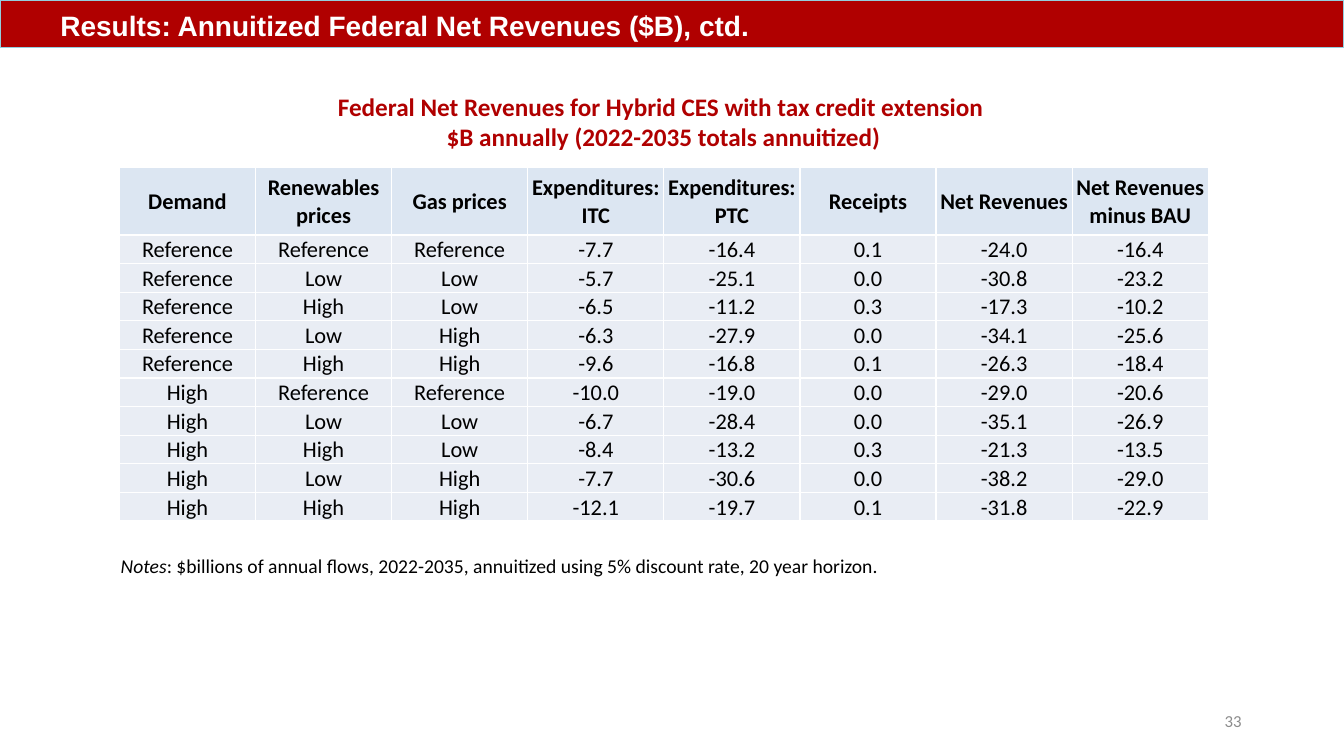
from dataclasses import dataclass

import pptx
import pptx.dml.color
import pptx.enum.text
import pptx.oxml.ns
import pptx.util
from lxml import etree
from pptx.util import Cm

ALIGN = pptx.enum.text.PP_ALIGN
ANCHOR = pptx.enum.text.MSO_ANCHOR

RED = "B00000"
WHITE = "FFFFFF"
BLACK = "000000"
GREY = "8C8C8C"
BAR_EDGE = "93CDDD"
HEADER_FILL = "DCE6F2"
BODY_FILL = "E9EDF4"

SLIDE_WIDTH = Cm(33.87)
SLIDE_HEIGHT = Cm(19.05)
TABLE_LEFT = Cm(3.01)
COLUMN_WIDTH = Cm(3.43)
HEADER_HEIGHT = Cm(1.7)
BODY_ROW_HEIGHT = Cm(0.71)

HEADERS = (
    "Demand", "Renewables prices", "Gas prices", "Expenditures: ITC",
    "Expenditures: PTC", "Receipts", "Net Revenues", "Net Revenues minus BAU",
)
SCENARIOS = (
    ("Reference", "Reference", "Reference", "-7.7", "-16.4", "0.1", "-24.0", "-16.4"),
    ("Reference", "Low", "Low", "-5.7", "-25.1", "0.0", "-30.8", "-23.2"),
    ("Reference", "High", "Low", "-6.5", "-11.2", "0.3", "-17.3", "-10.2"),
    ("Reference", "Low", "High", "-6.3", "-27.9", "0.0", "-34.1", "-25.6"),
    ("Reference", "High", "High", "-9.6", "-16.8", "0.1", "-26.3", "-18.4"),
    ("High", "Reference", "Reference", "-10.0", "-19.0", "0.0", "-29.0", "-20.6"),
    ("High", "Low", "Low", "-6.7", "-28.4", "0.0", "-35.1", "-26.9"),
    ("High", "High", "Low", "-8.4", "-13.2", "0.3", "-21.3", "-13.5"),
    ("High", "Low", "High", "-7.7", "-30.6", "0.0", "-38.2", "-29.0"),
    ("High", "High", "High", "-12.1", "-19.7", "0.1", "-31.8", "-22.9"),
)


@dataclass(frozen=True)
class TextStyle:
    size: int
    color: str = BLACK
    font: str = "Calibri"
    bold: bool = False
    align: ALIGN = ALIGN.CENTER


@dataclass(frozen=True)
class TextBox:
    left: float
    top: float
    width: float
    height: float
    text: str
    style: TextStyle
    anchor: ANCHOR


TITLE_STYLE = TextStyle(20, WHITE, "Arial", True, ALIGN.LEFT)
HEADER_STYLE = TextStyle(16, bold=True)
BODY_STYLE = TextStyle(16)
NOTES_STYLE = TextStyle(14, align=ALIGN.LEFT)

TEXT_BOXES = (
    TextBox(7.34, 2.18, 18.77, 1.8,
            "Federal Net Revenues for Hybrid CES with tax credit extension \n"
            "$B annually (2022-2035 totals annuitized)",
            TextStyle(18, RED, bold=True), ANCHOR.TOP),
    TextBox(23.92, 17.66, 7.62, 1.01, "33",
            TextStyle(12, GREY, align=ALIGN.RIGHT), ANCHOR.MIDDLE),
)


def rgb(color: str) -> pptx.dml.color.RGBColor:
    return pptx.dml.color.RGBColor.from_string(color)


def format_text(text_frame: pptx.text.text.TextFrame, style: TextStyle) -> None:
    for paragraph in text_frame.paragraphs:
        paragraph.alignment = style.align
        for run in paragraph.runs:
            run.font.name = style.font
            run.font.size = pptx.util.Pt(style.size)
            run.font.bold = style.bold
            run.font.color.rgb = rgb(style.color)


def add_title_bar(slide: pptx.slide.Slide, text: str) -> None:
    title = slide.shapes.title
    title.left, title.top = 0, 0
    title.width, title.height = SLIDE_WIDTH, Cm(1.19)
    title.fill.solid()
    title.fill.fore_color.rgb = rgb(RED)
    title.line.color.rgb = rgb(BAR_EDGE)
    title.line.width = 0
    text_frame = title.text_frame
    text_frame.text = text
    text_frame.auto_size = pptx.enum.text.MSO_AUTO_SIZE.NONE
    text_frame.vertical_anchor = ANCHOR.BOTTOM
    text_frame.margin_left = Cm(1.52)
    format_text(text_frame, TITLE_STYLE)


def add_text_box(slide: pptx.slide.Slide, box: TextBox) -> None:
    shape = slide.shapes.add_textbox(
        Cm(box.left), Cm(box.top), Cm(box.width), Cm(box.height))
    text_frame = shape.text_frame
    text_frame.word_wrap = True
    text_frame.vertical_anchor = box.anchor
    text_frame.text = box.text
    format_text(text_frame, box.style)


def add_borders(cell: pptx.table._Cell) -> None:
    qualified = pptx.oxml.ns.qn
    properties = cell._tc.get_or_add_tcPr()
    for side in ("a:lnL", "a:lnR", "a:lnT", "a:lnB"):
        line = etree.SubElement(properties, qualified(side), w=str(pptx.util.Pt(1)))
        fill = etree.SubElement(line, qualified("a:solidFill"))
        etree.SubElement(fill, qualified("a:srgbClr"), val=WHITE)


def fill_cell(cell: pptx.table._Cell, text: str, style: TextStyle,
              fill: str, anchor: ANCHOR = ANCHOR.MIDDLE) -> None:
    cell.text_frame.text = text
    format_text(cell.text_frame, style)
    cell.margin_left = cell.margin_right = cell.margin_top = Cm(0.03)
    cell.margin_bottom = 0
    cell.vertical_anchor = anchor
    add_borders(cell)
    cell.fill.solid()
    cell.fill.fore_color.rgb = rgb(fill)


def add_plain_table(slide: pptx.slide.Slide, rows: int, columns: int, top: int,
                    width: int, height: int) -> pptx.table.Table:
    table = slide.shapes.add_table(rows, columns, TABLE_LEFT, top, width, height).table
    table.first_row = False
    table.horz_banding = False
    return table


def add_revenue_table(slide: pptx.slide.Slide) -> None:
    height = HEADER_HEIGHT + BODY_ROW_HEIGHT * len(SCENARIOS)
    table = add_plain_table(slide, len(SCENARIOS) + 1, len(HEADERS), Cm(4.22),
                            COLUMN_WIDTH * len(HEADERS), height)
    for row_index, values in enumerate((HEADERS, *SCENARIOS)):
        is_header = row_index == 0
        table.rows[row_index].height = HEADER_HEIGHT if is_header else BODY_ROW_HEIGHT
        style = HEADER_STYLE if is_header else BODY_STYLE
        fill = HEADER_FILL if is_header else BODY_FILL
        for column_index, value in enumerate(values):
            fill_cell(table.cell(row_index, column_index), value, style, fill)


def add_notes_table(slide: pptx.slide.Slide) -> None:
    table = add_plain_table(slide, 1, 1, Cm(13.94), Cm(23.27), Cm(0.74))
    cell = table.cell(0, 0)
    fill_cell(cell, "Notes", NOTES_STYLE, WHITE, ANCHOR.TOP)
    paragraph = cell.text_frame.paragraphs[0]
    paragraph.add_run().text = (
        ": $billions of annual flows, 2022-2035, annuitized using 5% discount rate, "
        "20 year horizon.")
    format_text(cell.text_frame, NOTES_STYLE)
    paragraph.runs[0].font.italic = True


def main() -> None:
    presentation = pptx.Presentation()
    presentation.slide_width = SLIDE_WIDTH
    presentation.slide_height = SLIDE_HEIGHT
    slide = presentation.slides.add_slide(presentation.slide_layouts[5])
    add_title_bar(slide, "Results: Annuitized Federal Net Revenues ($B), ctd.")
    add_notes_table(slide)
    add_revenue_table(slide)
    for box in TEXT_BOXES:
        add_text_box(slide, box)
    presentation.save("out.pptx")


if __name__ == "__main__":
    main()
